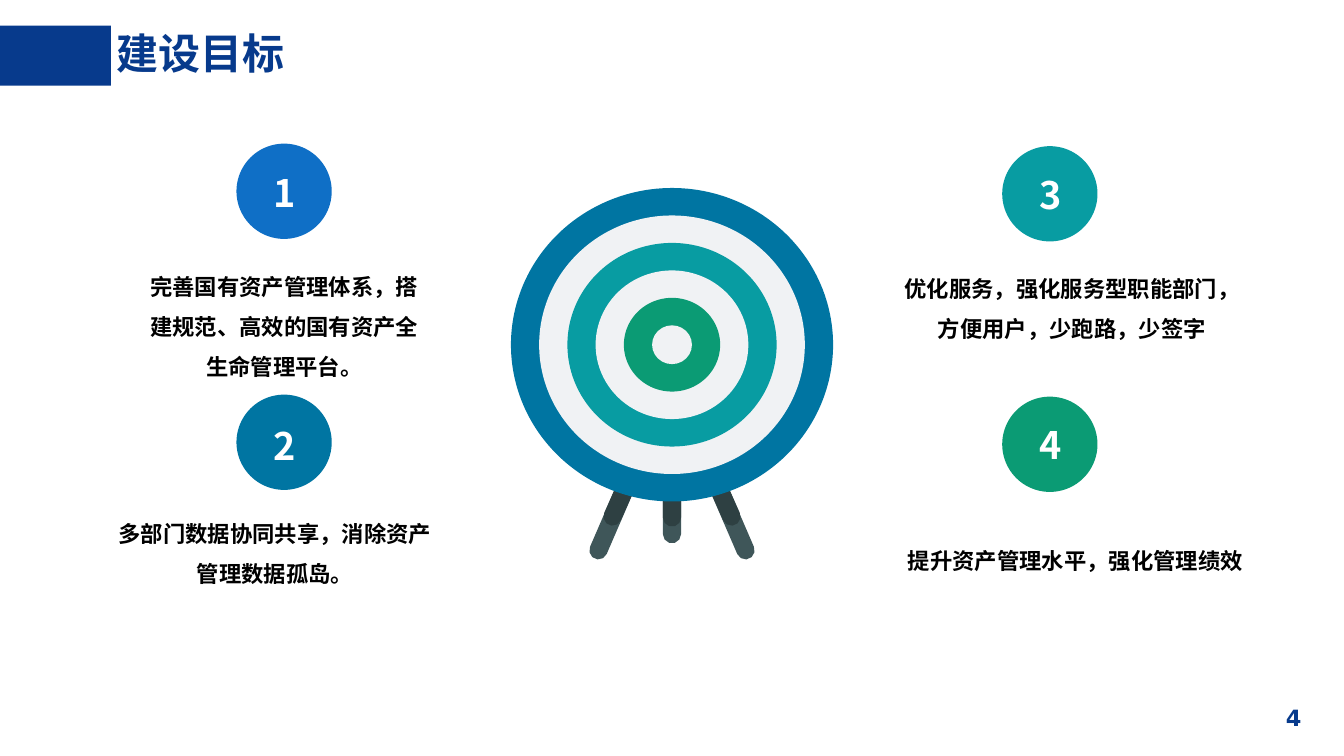
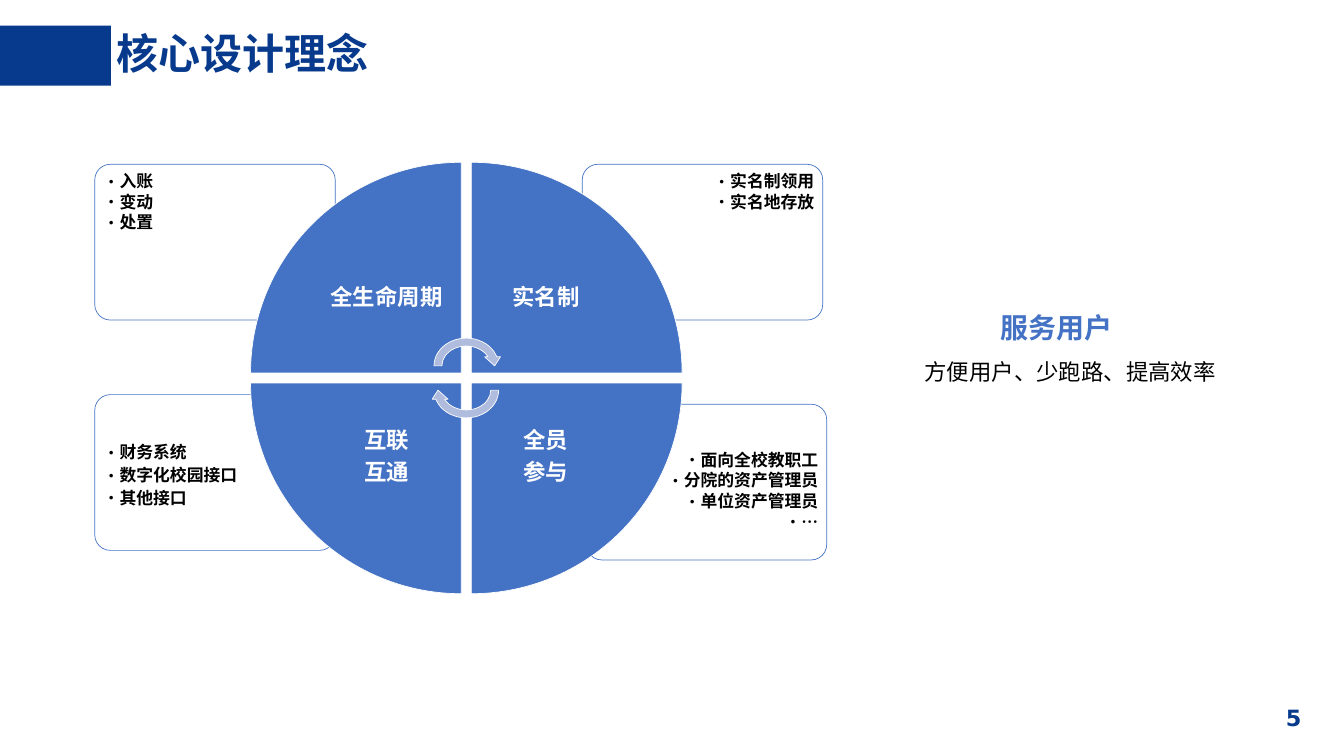
import math
from dataclasses import dataclass

import pptx
import pptx.dml.color
import pptx.enum.shapes
import pptx.enum.text
import pptx.oxml.ns
import pptx.util
from lxml import etree

Inches = pptx.util.Inches
Pt = pptx.util.Pt
SHAPE = pptx.enum.shapes.MSO_SHAPE
ALIGN = pptx.enum.text.PP_ALIGN
ANCHOR = pptx.enum.text.MSO_ANCHOR
AUTO_SIZE = pptx.enum.text.MSO_AUTO_SIZE
qn = pptx.oxml.ns.qn


@dataclass(frozen=True)
class Theme:
    # Colours
    navy: str = "073A8C"
    blue: str = "0F6FC6"
    ocean: str = "0075A2"
    teal: str = "089CA2"
    green: str = "0B9B74"
    pale: str = "F0F2F4"
    leg: str = "3F5659"
    leg_shade: str = "2E4042"
    accent: str = "4472C4"
    arrow: str = "B0BCDE"
    white: str = "FFFFFF"
    black: str = "000000"
    # Fonts and sizes
    title_font: str = "Noto Sans CJK JP"
    body_font: str = "Noto Sans CJK SC"
    page_font: str = "DejaVu Sans"
    title_size: float = 60
    number_size: float = 54
    heading_size: float = 40
    label_size: float = 32
    goal_size: float = 31.9
    list_size: float = 24


THEME = Theme()


def rgb(color):
    return pptx.dml.color.RGBColor.from_string(color)


class Deck:
    """Holds the theme and the current slide, and draws on it."""

    def __init__(self, theme):
        self.theme = theme
        self.presentation = pptx.Presentation()
        self.presentation.slide_width = Inches(26.66)
        self.presentation.slide_height = Inches(15)
        self.layout = self.presentation.slide_layouts.get_by_name("Title Only")
        self.slide = None

    def add_slide(self, title, page):
        """Start a slide with its title and page number."""
        theme = self.theme
        first = self.slide is None
        self.slide = self.presentation.slides.add_slide(self.layout)
        if first:
            # The band moves to the layout, so every slide shows it
            band = self.shape(SHAPE.RECTANGLE, (0, 0.51, 2.2, 1.19), theme.navy)
            self.layout.shapes.element.insert(2, band.element)
        self.text((24.66, 13.77, 2, 0.94), [str(page)], theme.label_size, theme.navy,
                  font=theme.page_font, insets=(0.4, 0.2))
        placeholder = self.slide.shapes.title
        self.place(placeholder, (2.21, 0.52, 20.62, 1.18))
        frame = placeholder.text_frame
        frame.auto_size = AUTO_SIZE.NONE
        frame.vertical_anchor = ANCHOR.MIDDLE
        self.paragraph(frame.paragraphs[0], title, theme.title_size, theme.navy,
                       font=theme.title_font, align=ALIGN.LEFT, spacing=0.9)

    def place(self, shape, box):
        for name, value in zip(("left", "top", "width", "height"), box):
            setattr(shape, name, Inches(value))

    def paint(self, shape, fill, line=None):
        shape.shadow.inherit = False
        shape.fill.solid()
        shape.fill.fore_color.rgb = rgb(fill)
        if line:
            shape.line.color.rgb = rgb(line)
            shape.line.width = Pt(1)
        else:
            shape.line.fill.background()
        return shape

    def shape(self, kind, box, fill, line=None, rotation=0):
        shape = self.slide.shapes.add_shape(kind, *map(Inches, box))
        shape.rotation = rotation
        return self.paint(shape, fill, line)

    def capsule(self, start, end, radius, fill):
        """Draw a bar with round ends between two centres."""
        direction = math.atan2(end[1] - start[1], end[0] - start[0])
        points = []
        for center, first in ((end, -90), (start, 90)):
            for degrees in range(first, first + 181, 36):
                angle = direction + math.radians(degrees)
                points.append((Inches(center[0] + radius * math.cos(angle)),
                               Inches(center[1] + radius * math.sin(angle))))
        builder = self.slide.shapes.build_freeform(*points[0])
        builder.add_line_segments(points[1:], close=True)
        self.paint(builder.convert_to_shape(), fill)

    def text(self, box, lines, size, color, insets=(0.1, 0.05), anchor=ANCHOR.TOP,
             fit=AUTO_SIZE.SHAPE_TO_FIT_TEXT, wrap=True, **style):
        frame = self.slide.shapes.add_textbox(*map(Inches, box)).text_frame
        side, end = map(Inches, insets)
        settings = {"word_wrap": wrap, "auto_size": fit, "vertical_anchor": anchor,
                    "margin_left": side, "margin_right": side,
                    "margin_top": end, "margin_bottom": end}
        for name, value in settings.items():
            setattr(frame, name, value)
        for index, line in enumerate(lines):
            paragraph = frame.add_paragraph() if index else frame.paragraphs[0]
            self.paragraph(paragraph, line, size, color, **style)
        return frame

    def paragraph(self, paragraph, text, size, color, font=None, bold=True,
                  align=ALIGN.CENTER, spacing=None, after=0, bullet=False, indent=0):
        name = font or self.theme.body_font
        paragraph.alignment = align
        if spacing:
            paragraph.line_spacing = spacing
        properties = paragraph._p.get_or_add_pPr()
        if indent:
            properties.set("marL", str(Inches(indent)))
        if after:
            gap = etree.SubElement(properties, qn("a:spcAft"))
            etree.SubElement(gap, qn("a:spcPct"), val=str(after * 1000))
        if bullet:
            paragraph.level = 1
            properties.set("marL", str(Inches(0.25)))
            properties.set("indent", str(Inches(-0.25)))
            etree.SubElement(properties, qn("a:buFont"), typeface=name)
            etree.SubElement(properties, qn("a:buChar"), char="•")
        run = paragraph.add_run()
        run.text = text
        for key, value in {"name": name, "size": Pt(size), "bold": bold}.items():
            setattr(run.font, key, value)
        run.font.color.rgb = rgb(color)
        run_properties = run._r.get_or_add_rPr()
        run_properties.set("lang", "zh-CN")
        etree.SubElement(run_properties, qn("a:ea"), typeface=name)

    def card(self, left, top, offset, align, spacing, items):
        """Draw a rounded card with its bulleted list."""
        theme = self.theme
        card = self.shape(SHAPE.ROUNDED_RECTANGLE, (left, top, 4.77, 3.09),
                          theme.white, theme.accent)
        card.adjustments[0] = 0.1
        fill_color = card._element.spPr.find(qn("a:solidFill"))[0]
        etree.SubElement(fill_color, qn("a:alpha"), val="90000")
        self.text((left + offset[0], top + offset[1], 3.2, 2.18), items, theme.list_size,
                  theme.black, insets=(0.1, 0.1), fit=AUTO_SIZE.NONE, align=align,
                  spacing=spacing, after=15, bullet=True)

    def target(self):
        """Draw the target on its stand."""
        theme = self.theme
        center_x, center_y, radius = 13.33, 6.84, 0.18
        # Legs: full length first, then the shaded upper part
        for color, spread, side_end, middle_end in (
                (theme.leg, 1.46, 10.92, 10.6), (theme.leg_shade, 1.18, 10.25, 10.27)):
            for side in (-1, 1):
                self.capsule((center_x + side * 0.76, 9.3),
                             (center_x + side * spread, side_end), radius, color)
            self.capsule((center_x, 9.4), (center_x, middle_end), radius, color)
        # Rings from the outside in
        rings = (theme.ocean, theme.pale, theme.teal, theme.pale, theme.green, theme.pale)
        for index, color in enumerate(rings):
            width, height = 6.39 - 1.12 * index, 6.22 - 1.09 * index
            self.shape(SHAPE.OVAL, (center_x - width / 2, center_y - height / 2,
                                    width, height), color)


def build_goals(deck):
    theme = deck.theme
    deck.add_slide("建设目标", 4)
    # Circles, target, then the numbers
    goals = ((4.69, 2.85, 3.32, theme.blue), (4.69, 7.83, 8.33, theme.ocean),
             (19.88, 2.9, 3.36, theme.teal), (19.88, 7.87, 8.32, theme.green))
    for left, top, _, color in goals:
        deck.shape(SHAPE.OVAL, (left, top, 1.89, 1.89), color)
    deck.target()
    for number, (left, _, number_top, _) in enumerate(goals, 1):
        deck.text((left + 0.62, number_top, 0.67, 1.01), [str(number)],
                  theme.number_size, theme.white, wrap=False)
    descriptions = (
        ((2.68, 5.1, 5.92, 2.43), "完善国有资产管理体系，搭建规范、高效的国有资产全生命管理平台。"),
        ((2.08, 10.01, 6.75, 1.62), "多部门数据协同共享，消除资产管理数据孤岛。"),
        ((17.84, 5.15, 6.85, 1.62), "优化服务，强化服务型职能部门，方便用户，少跑路，少签字"),
        ((17.64, 10.54, 7.39, 0.81), "提升资产管理水平，强化管理绩效"),
    )
    for box, description in descriptions:
        deck.text(box, [description], theme.goal_size, theme.black, spacing=1.5)


def build_concepts(deck):
    theme = deck.theme
    deck.add_slide("核心设计理念", 5)
    # Cards behind the wheel
    cards = (
        (11.63, 8.02, (1.5, 0.84), ALIGN.RIGHT, 0.9,
         ["面向全校教职工", "分院的资产管理员", "单位资产管理员", "…"]),
        (1.88, 7.83, (0.06, 0.84), ALIGN.LEFT, None,
         ["财务系统", "数字化校园接口", "其他接口"]),
        (11.55, 3.26, (1.5, 0.07), ALIGN.RIGHT, 0.9, ["实名制领用", "实名地存放"]),
        (1.88, 3.26, (0.06, 0.07), ALIGN.LEFT, 0.9, ["入账", "变动", "处置"]),
    )
    for card in cards:
        deck.card(*card)
    # Wheel quarters, clockwise from the upper left
    wedge, label = 4.18, 2.96
    quarters = ((4.97, 3.22, ["全生命周期"]), (9.35, 3.22, ["实名制"]),
                (9.35, 7.6, ["全员", "参与"]), (4.97, 7.6, ["互联", "互通"]))
    for index, (left, top, lines) in enumerate(quarters):
        deck.shape(SHAPE.PIE_WEDGE, (left, top, wedge, wedge), theme.accent,
                   theme.white, rotation=90 * index)
        label_left = left + (wedge - label if left < 9 else 0)
        label_top = top + (wedge - label if top < 7 else 0)
        deck.text((label_left, label_top, label, label), lines, theme.label_size,
                  theme.white, insets=(0.25, 0.25), anchor=ANCHOR.MIDDLE,
                  fit=AUTO_SIZE.NONE, spacing=0.9, after=35)
    # Turning arrows at the hub
    for top, rotation in ((6.63, 0), (7.11, 180)):
        deck.shape(SHAPE.CIRCULAR_ARROW, (8.53, top, 1.44, 1.26), theme.arrow,
                   theme.white, rotation)
    # Summary beside the wheel
    summary = deck.text((17.33, 5.78, 7.26, 1.82), ["服务用户"], theme.heading_size,
                        theme.accent, spacing=1.5)
    deck.paragraph(summary.add_paragraph(), "方便用户、少跑路、提高效率", theme.label_size,
                   theme.black, bold=False, spacing=1.5, indent=0.54)


def main():
    deck = Deck(THEME)
    build_goals(deck)
    build_concepts(deck)
    deck.presentation.save("out.pptx")


if __name__ == "__main__":
    main()
